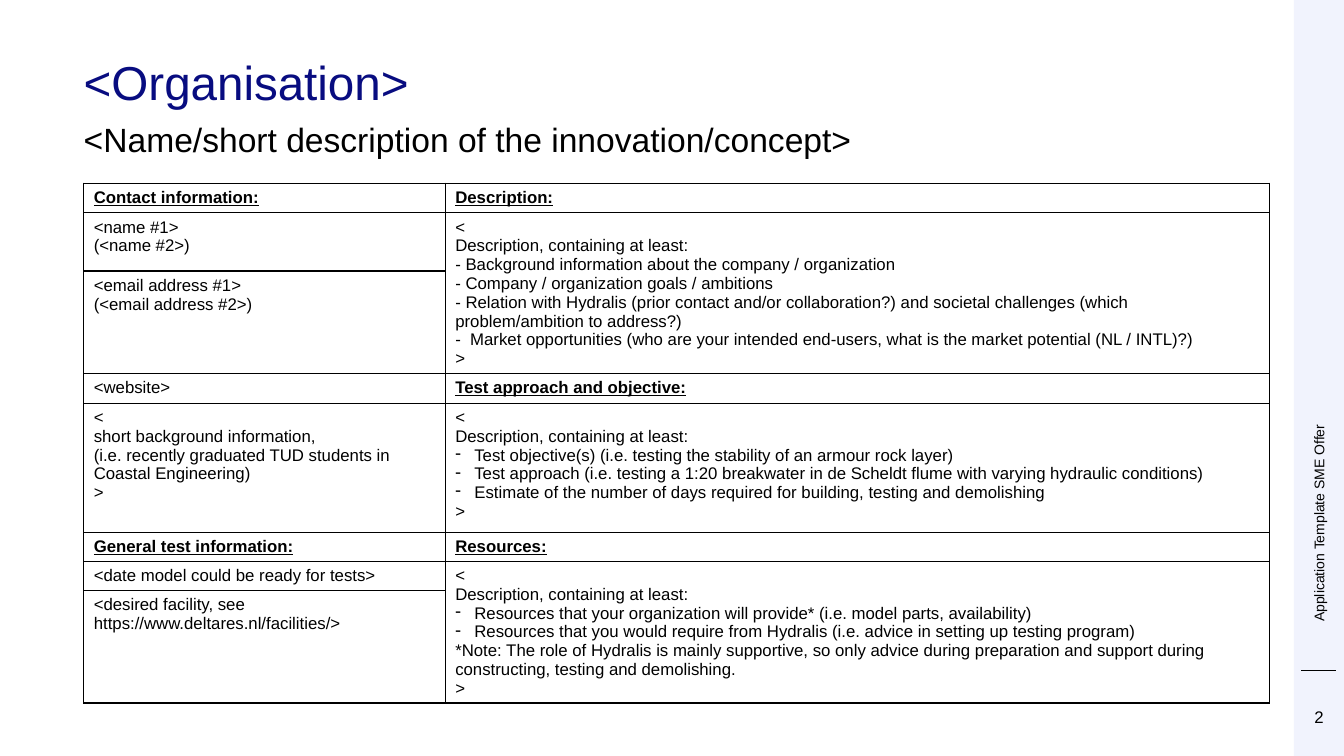
from lxml.etree import SubElement
from pptx import Presentation
from pptx.dml.color import RGBColor
from pptx.enum.shapes import MSO_CONNECTOR as Connector, MSO_SHAPE as Shape
from pptx.enum.text import MSO_ANCHOR as Anchor, MSO_AUTO_SIZE as AutoSize, PP_ALIGN as Align
from pptx.oxml import parse_xml
from pptx.oxml.ns import nsdecls, qn
from pptx.util import Cm, Pt

BULLET = "•"
INDENT = Cm(0.48)
COLUMN_WIDTHS = [9.11, 20.77]
ROW_HEIGHTS = [0.74, 1.47, 2.58, 0.75, 3.25, 0.73, 0.73, 2.84]
HEADINGS = {(0, 0), (0, 1), (3, 1), (5, 0), (5, 1)}
MERGES = [((1, 1), (2, 1)), ((6, 1), (7, 1))]

DESCRIPTION = """<
Description, containing at least:
- Background information about the company / organization
- Company / organization goals / ambitions
- Relation with Hydralis (prior contact and/or collaboration?) and societal challenges (which problem/ambition to address?)
-  Market opportunities (who are your intended end-users, what is the market potential (NL / INTL)?)
>"""
BACKGROUND = """<
short background information,
(i.e. recently graduated TUD students in Coastal Engineering)
>"""
APPROACH = """<
Description, containing at least:
•Test objective(s) (i.e. testing the stability of an armour rock layer)
•Test approach (i.e. testing a 1:20 breakwater in de Scheldt flume with varying hydraulic conditions)
•Estimate of the number of days required for building, testing and demolishing
>"""
RESOURCES = """<
Description, containing at least:
•Resources that your organization will provide* (i.e. model parts, availability)
•Resources that you would require from Hydralis (i.e. advice in setting up testing program)
*Note: The role of Hydralis is mainly supportive, so only advice during preparation and support during constructing, testing and demolishing.
>"""
ROWS = [
    ["Contact information:", "Description:"],
    ["<name #1>\n(<name #2>)", DESCRIPTION],
    ["<email address #1>\n(<email address #2>)", ""],
    ["<website>", "Test approach and objective:"],
    [BACKGROUND, APPROACH],
    ["General test information:", "Resources:"],
    ["<date model could be ready for tests>", RESOURCES],
    ["<desired facility, see https://www.deltares.nl/facilities/>", ""],
]


def colour(value):
    return RGBColor.from_string(value)


class ApplicationSlide:
    font_name = "Arial"
    black = "000000"
    navy = "080C80"
    pale = "F1F3FD"

    def __init__(self, slide):
        self.slide = slide

    def style(self, paragraph, size, ink=black, bold=False):
        for run in paragraph.runs:
            run.font.name = self.font_name
            run.font.size = Pt(size)
            run.font.color.rgb = colour(ink)
            run.font.bold = bold
            run.font.underline = bold

    def fill_frame(self, frame, text, size, ink=black, align=Align.LEFT):
        frame.text = text
        frame.word_wrap = True
        frame.auto_size = AutoSize.NONE
        frame.vertical_anchor = Anchor.TOP
        frame.margin_left = frame.margin_right = 0
        frame.margin_top = frame.margin_bottom = 0
        frame.paragraphs[0].alignment = align
        self.style(frame.paragraphs[0], size, ink)

    def placeholder(self, shape, box, text, size, ink=black):
        shape.left, shape.top, shape.width, shape.height = map(Cm, box)
        self.fill_frame(shape.text_frame, text, size, ink)
        paragraph = shape.text_frame.paragraphs[0]
        paragraph.line_spacing = 0.9
        paragraph.space_before = Pt(0)
        properties = paragraph._p.get_or_add_pPr()
        properties.set("marL", "0")
        properties.set("indent", "0")
        SubElement(properties, qn("a:buNone"))

    def text(self, box, text, size, align=Align.LEFT):
        shape = self.slide.shapes.add_textbox(*map(Cm, box))
        self.fill_frame(shape.text_frame, text, size, align=align)
        return shape

    def upward_text(self, box, text, size):
        shape = self.text(box, text, size)
        shape.text_frame.vertical_anchor = Anchor.MIDDLE
        shape.element.txBody.bodyPr.set("vert", "vert270")

    def band(self, box):
        shape = self.slide.shapes.add_shape(Shape.RECTANGLE, *map(Cm, box))
        shape.shadow.inherit = False
        shape.fill.solid()
        shape.fill.fore_color.rgb = colour(self.pale)
        shape.line.fill.background()

    def rule(self, left, right, top):
        line = self.slide.shapes.add_connector(
            Connector.STRAIGHT, Cm(left), Cm(top), Cm(right), Cm(top))
        line.line.color.rgb = colour(self.black)
        line.line.width = Pt(0.5)
        SubElement(line.element.spPr, qn("a:effectLst"))

    def border(self, cell):
        properties = cell._tc.get_or_add_tcPr()
        for position, side in enumerate(("lnL", "lnR", "lnT", "lnB")):
            properties.insert(position, parse_xml(
                f'<a:{side} {nsdecls("a")} w="{Pt(1)}"><a:solidFill>'
                f'<a:srgbClr val="{self.black}"/></a:solidFill></a:{side}>'))

    def fill_cell(self, cell, text, bold):
        cell.fill.background()
        self.border(cell)
        lines = text.split("\n")
        cell.text_frame.text = "\n".join(line.removeprefix(BULLET) for line in lines)
        for line, paragraph in zip(lines, cell.text_frame.paragraphs):
            if line.startswith(BULLET):
                properties = paragraph._p.get_or_add_pPr()
                properties.set("marL", str(INDENT))
                properties.set("indent", str(-INDENT))
                SubElement(properties, qn("a:buChar"), char="-")
            paragraph.font.size = Pt(12)
            self.style(paragraph, 12, bold=bold)

    def table(self, left, top):
        table = self.slide.shapes.add_table(
            len(ROWS), len(COLUMN_WIDTHS), Cm(left), Cm(top),
            Cm(sum(COLUMN_WIDTHS)), Cm(sum(ROW_HEIGHTS))).table
        table.first_row = table.horz_banding = False
        for column, width in zip(table.columns, COLUMN_WIDTHS):
            column.width = Cm(width)
        for row, height in zip(table.rows, ROW_HEIGHTS):
            row.height = Cm(height)
        for first, last in MERGES:
            table.cell(*first).merge(table.cell(*last))
        for row, texts in enumerate(ROWS):
            for column, text in enumerate(texts):
                self.fill_cell(table.cell(row, column), text, (row, column) in HEADINGS)


def main():
    presentation = Presentation()
    presentation.slide_width = Cm(33.87)
    presentation.slide_height = Cm(19.05)
    slide = presentation.slides.add_slide(presentation.slide_layouts[1])
    page = ApplicationSlide(slide)
    page.band((32.61, 0, 1.26, 19.05))
    page.rule(32.79, 33.68, 16.89)
    page.upward_text((33.02, 1.5, 0.43, 14.17), "Application Template SME Offer", 10)
    page.text((32.61, 17.81, 1.26, 0.51), "2", 12, Align.CENTER)
    page.placeholder(slide.shapes.title, (2.11, 1.5, 29.21, 2.59),
                     "<Organisation>", 34, page.navy)
    page.placeholder(slide.placeholders[1], (2.11, 3.1, 29.21, 1.24),
                     "<Name/short description of the innovation/concept>", 24)
    page.table(2.11, 4.62)
    presentation.save("out.pptx")


if __name__ == "__main__":
    main()
